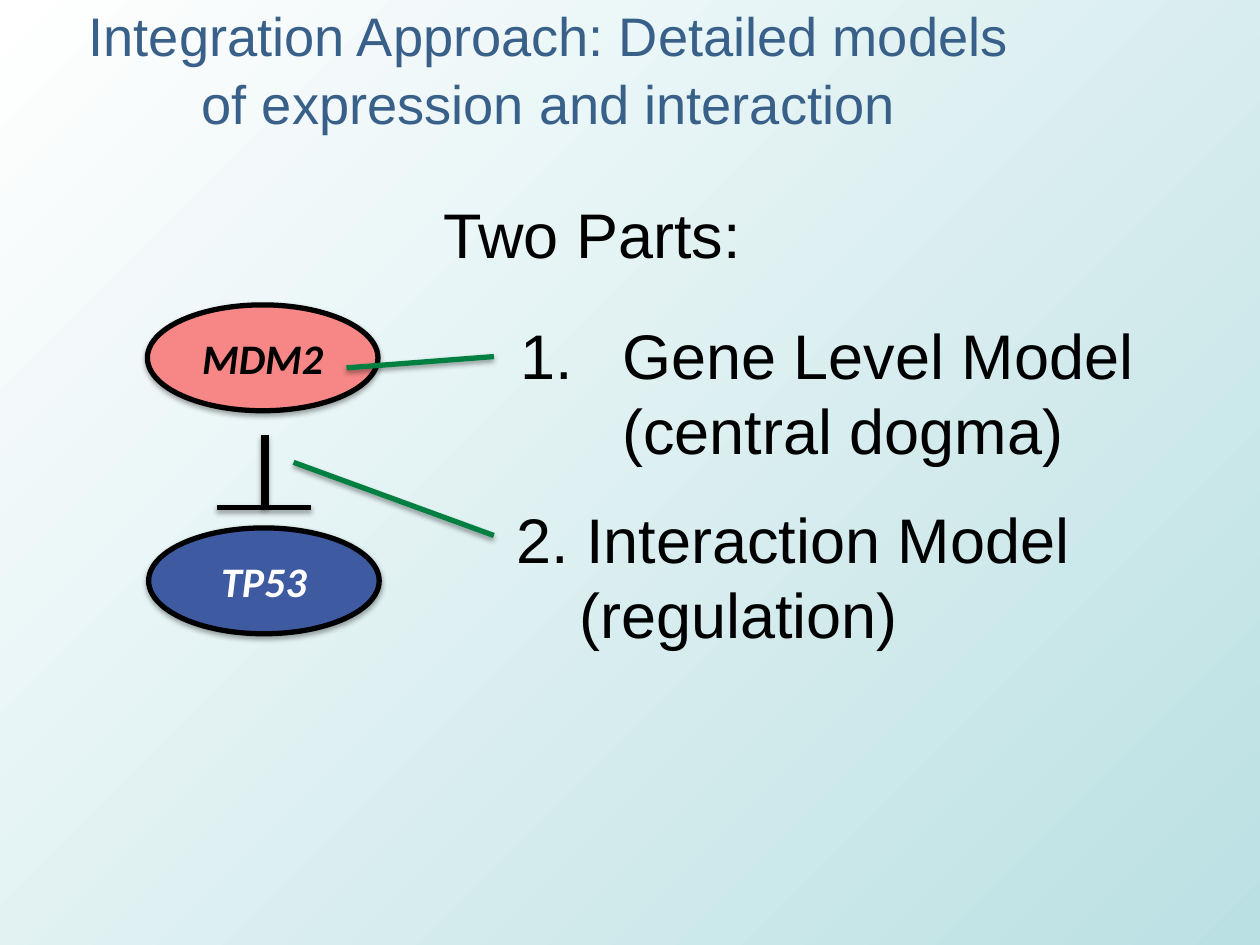
from lxml import etree
from pptx import Presentation
from pptx.dml.color import RGBColor
from pptx.enum.shapes import MSO_CONNECTOR, MSO_SHAPE
from pptx.enum.text import MSO_ANCHOR, MSO_AUTO_SIZE, PP_ALIGN
from pptx.oxml.ns import qn
from pptx.util import Inches, Pt

STRAIGHT = MSO_CONNECTOR.STRAIGHT
OVAL = MSO_SHAPE.OVAL
MIDDLE = MSO_ANCHOR.MIDDLE
NO_AUTOFIT = MSO_AUTO_SIZE.NONE
FIT_SHAPE = MSO_AUTO_SIZE.SHAPE_TO_FIT_TEXT
CENTER = PP_ALIGN.CENTER

BLACK = RGBColor(0x00, 0x00, 0x00)
WHITE = RGBColor(0xFF, 0xFF, 0xFF)
PALE_TEAL = RGBColor(0xBB, 0xE0, 0xE3)
TITLE_BLUE = RGBColor(0x38, 0x60, 0x89)
GENE_RED = RGBColor(0xF6, 0x87, 0x86)
GENE_BLUE = RGBColor(0x3E, 0x5A, 0xA1)
GREEN = RGBColor(0x00, 0x80, 0x40)


def add_shadow(shape, distance, opacity):
    """Give the shape a soft black shadow that falls straight down."""
    effects = etree.SubElement(shape._element.spPr, qn("a:effectLst"))
    shadow = etree.SubElement(
        effects, qn("a:outerShdw"), blurRad=str(Pt(3.1)),
        dist=str(Pt(distance)), dir="5400000", rotWithShape="0")
    color = etree.SubElement(shadow, qn("a:srgbClr"), val="000000")
    etree.SubElement(color, qn("a:alpha"), val=str(opacity * 1000))


def add_run(paragraph, text, size, color, name="Arial"):
    run = paragraph.add_run()
    run.text = text
    run.font.size = Pt(size)
    run.font.name = name
    run.font.color.rgb = color
    return run


presentation = Presentation()
presentation.slide_width = Inches(10)
presentation.slide_height = Inches(7.5)
slide = presentation.slides.add_slide(presentation.slide_layouts[5])

# Background: white at top left to pale teal at bottom right
background = slide.background.fill
background.gradient()
background.gradient_angle = 315
for stop, position, color in zip(background.gradient_stops, (0, 1), (WHITE, PALE_TEAL)):
    stop.position = position
    stop.color.rgb = color

# Title
title = slide.shapes.title
title.left, title.top = Inches(0.5), Inches(-0.09)
title.width, title.height = Inches(7.59), Inches(1.25)
frame = title.text_frame
frame.auto_size = NO_AUTOFIT
frame.word_wrap = True
frame.vertical_anchor = MIDDLE
frame.margin_left, frame.margin_right = Inches(0.07), 0
frame.margin_top = frame.margin_bottom = Inches(0.04)
paragraph = frame.paragraphs[0]
paragraph.alignment = CENTER
paragraph.line_spacing = 1.05
paragraph._p.get_or_add_pPr().set("marL", str(Inches(0.04)))
add_run(paragraph, "Integration Approach: Detailed models of expression and interaction",
        31, TITLE_BLUE)

# Genes
for gene, left, top, fill, text_color in (
    ("MDM2", 1.17, 2.42, GENE_RED, BLACK),
    ("TP53", 1.18, 4.19, GENE_BLUE, WHITE),
):
    ellipse = slide.shapes.add_shape(
        OVAL, Inches(left), Inches(top), Inches(1.83), Inches(0.84))
    ellipse.fill.solid()
    ellipse.fill.fore_color.rgb = fill
    ellipse.line.color.rgb = BLACK
    ellipse.line.width = Pt(3)
    add_shadow(ellipse, 1.8, 35)
    ellipse.text_frame.vertical_anchor = MIDDLE
    paragraph = ellipse.text_frame.paragraphs[0]
    paragraph.alignment = CENTER
    run = add_run(paragraph, gene, 24, text_color, "Calibri")
    run.font.bold = True
    run.font.italic = True

# Inhibition stem and bar, then the pointers to the two models
for x1, y1, x2, y2, color, width in (
    (2.1, 3.45, 2.1, 4.03, BLACK, 4.5),
    (1.72, 4.03, 2.47, 4.03, BLACK, 3),
    (2.75, 2.92, 3.92, 2.83, GREEN, 3),
    (2.33, 3.67, 3.92, 4.25, GREEN, 3),
):
    line = slide.shapes.add_connector(
        STRAIGHT, Inches(x1), Inches(y1), Inches(x2), Inches(y2))
    line.line.color.rgb = color
    line.line.width = Pt(width)
    add_shadow(line, 1.6, 38)

# Heading and the two models
for left, top, width, height, lines, numbered in (
    (3.42, 1.5, 2.59, 0.71, ("Two Parts:",), False),
    (4.03, 2.46, 5.08, 1.31, ("Gene Level Model", "\t(central dogma)"), True),
    (4, 3.92, 4.64, 1.31, ("2. Interaction Model", "\t(regulation)"), False),
):
    box = slide.shapes.add_textbox(
        Inches(left), Inches(top), Inches(width), Inches(height))
    frame = box.text_frame
    frame.word_wrap = False
    frame.auto_size = FIT_SHAPE
    for index, text in enumerate(lines):
        paragraph = frame.paragraphs[0] if index == 0 else frame.add_paragraph()
        if numbered:
            properties = paragraph._p.get_or_add_pPr()
            properties.set("marL", str(Inches(0.81)))
            properties.set("indent", str(Inches(-0.81)))
            if index == 0:
                etree.SubElement(properties, qn("a:buFont"), typeface="Arial")
                etree.SubElement(properties, qn("a:buAutoNum"), type="arabicPeriod")
        add_run(paragraph, text, 36, BLACK)

presentation.save("out.pptx")
